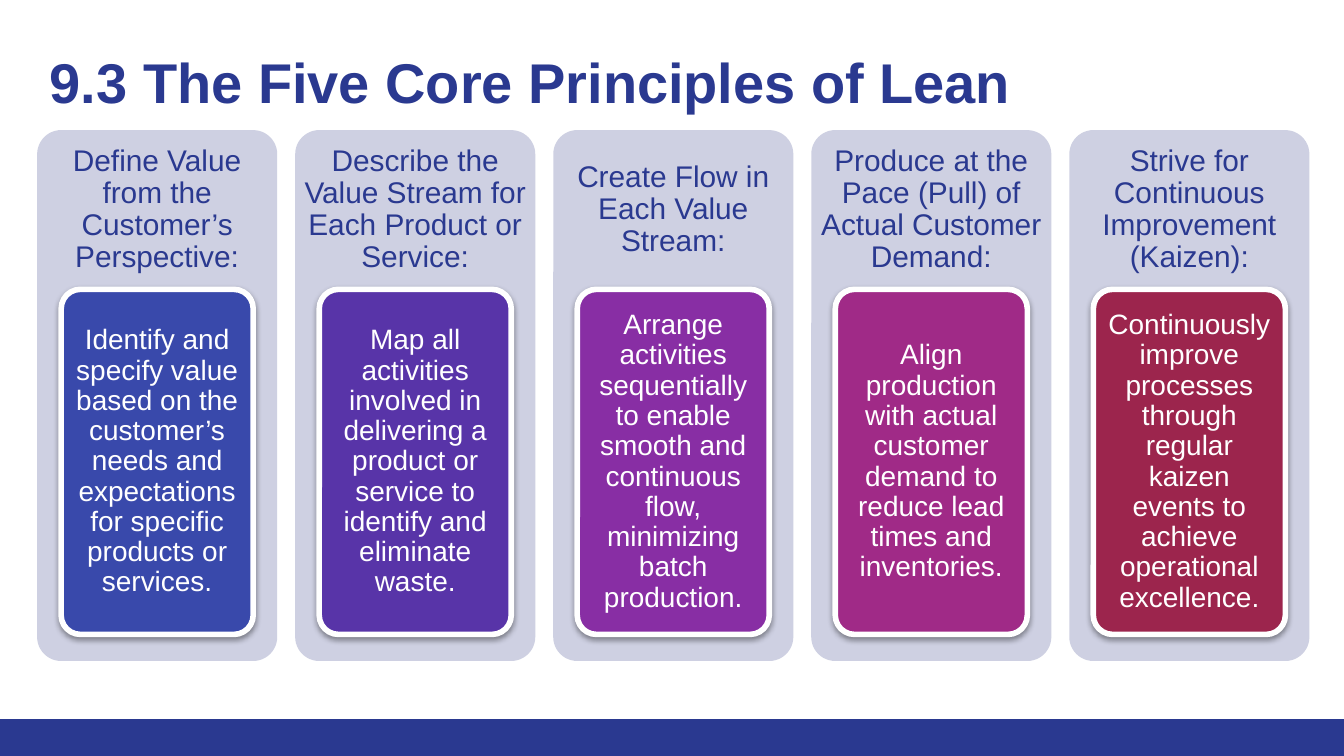
import pptx
import pptx.dml.color
import pptx.enum.shapes
import pptx.enum.text
import pptx.oxml
import pptx.oxml.ns
import pptx.util

Pt = pptx.util.Pt
ANCHOR = pptx.enum.text.MSO_ANCHOR
ALIGN = pptx.enum.text.PP_ALIGN
SHAPE = pptx.enum.shapes.MSO_SHAPE

NAVY = "2A3990"
PALE = "CED0E2"
WHITE = "FFFFFF"

# Column grid: the inner card is sized as a share of its column
COLUMN_LEFT, COLUMN_TOP = 19.9, 69.7
COLUMN_WIDTH, COLUMN_HEIGHT = 128.6, 284.4
COLUMN_PITCH = 138.24
HEADING_SHARE = 0.3
CORNER = 0.1

PRINCIPLES = [
    ("Define Value from the Customer’s Perspective:",
     "Identify and specify value based on the customer’s needs and "
     "expectations for specific products or services.", "3949AB"),
    ("Describe the Value Stream for Each Product or Service:",
     "Map all activities involved in delivering a product or service to "
     "identify and eliminate waste.", "5834A8"),
    ("Create Flow in Each Value Stream:",
     "Arrange activities sequentially to enable smooth and continuous flow, "
     "minimizing batch production.", "882EA4"),
    ("Produce at the Pace (Pull) of Actual Customer Demand:",
     "Align production with actual customer demand to reduce lead times and "
     "inventories.", "A02A87"),
    ("Strive for Continuous Improvement (Kaizen):",
     "Continuously improve processes through regular kaizen events to achieve "
     "operational excellence.", "9C254D"),
]


def color(value):
    return pptx.dml.color.RGBColor.from_string(value)


def add_run(paragraph, text, size, font_color, bold=False):
    run = paragraph.add_run()
    run.text = text
    run.font.name = "Arial"
    run.font.size = Pt(size)
    run.font.bold = bold
    run.font.color.rgb = color(font_color)


def set_margins(frame, left, top, right, bottom):
    frame.margin_left, frame.margin_top = Pt(left), Pt(top)
    frame.margin_right, frame.margin_bottom = Pt(right), Pt(bottom)


def add_panel(slide, preset, left, top, width, height, fill):
    shape = slide.shapes.add_shape(preset, Pt(left), Pt(top), Pt(width), Pt(height))
    shape.shadow.inherit = False
    shape.fill.solid()
    shape.fill.fore_color.rgb = color(fill)
    shape.line.fill.background()
    return shape


def add_rounded(slide, left, top, width, height, fill, text, size, font_color, margins):
    shape = add_panel(slide, SHAPE.ROUNDED_RECTANGLE, left, top, width, height, fill)
    shape.adjustments[0] = CORNER
    frame = shape.text_frame
    frame.word_wrap = True
    frame.vertical_anchor = ANCHOR.MIDDLE
    set_margins(frame, *margins)
    paragraph = frame.paragraphs[0]
    paragraph.alignment = ALIGN.CENTER
    paragraph.line_spacing = 0.9
    add_run(paragraph, text, size, font_color)
    return shape


def add_shadow(shape):
    effects = shape._element.spPr.find(pptx.oxml.ns.qn("a:effectLst"))
    effects.append(pptx.oxml.parse_xml(
        f'<a:outerShdw {pptx.oxml.ns.nsdecls("a")} blurRad="{Pt(3.1)}" '
        f'dist="{Pt(1.6)}" dir="5400000" rotWithShape="0">'
        '<a:srgbClr val="000000"><a:alpha val="38000"/></a:srgbClr></a:outerShdw>'))


def add_title(slide, text):
    title = slide.shapes.title
    title.left, title.top, title.width, title.height = Pt(19.5), Pt(14.4), Pt(682.6), Pt(64)
    frame = title.text_frame
    frame.word_wrap = True
    frame.auto_size = pptx.enum.text.MSO_AUTO_SIZE.NONE
    frame.vertical_anchor = ANCHOR.TOP
    set_margins(frame, 7.2, 10.8, 7.2, 7.2)
    paragraph = frame.paragraphs[0]
    paragraph.alignment = ALIGN.LEFT
    add_run(paragraph, text, 30, NAVY, bold=True)


def add_principle(slide, index, heading, description, fill):
    left = COLUMN_LEFT + index * COLUMN_PITCH
    # Pale column, its heading kept above the card
    add_rounded(slide, left, COLUMN_TOP, COLUMN_WIDTH, COLUMN_HEIGHT, PALE,
                heading, 16, NAVY,
                (1.1, 1.3, 1.1, COLUMN_HEIGHT * (1 - HEADING_SHARE) + 1.3))
    # Coloured card with the description
    card = add_rounded(slide, left + COLUMN_WIDTH * 0.1,
                       COLUMN_TOP + COLUMN_HEIGHT * HEADING_SHARE,
                       COLUMN_WIDTH * 0.8, COLUMN_HEIGHT * 0.65, fill,
                       description, 15, WHITE, (2.7, 2, 2.7, 2))
    card.line.color.rgb = color(WHITE)
    card.line.width = Pt(3)
    add_shadow(card)


def main():
    presentation = pptx.Presentation()
    presentation.slide_width, presentation.slide_height = Pt(720), Pt(405)
    slide = presentation.slides.add_slide(presentation.slide_layouts[5])

    # Footer band
    add_panel(slide, SHAPE.RECTANGLE, 0, 385.2, 720, 19.8, NAVY)
    add_title(slide, "9.3 The Five Core Principles of Lean")
    for index, principle in enumerate(PRINCIPLES):
        add_principle(slide, index, *principle)

    presentation.save("out.pptx")


if __name__ == "__main__":
    main()
